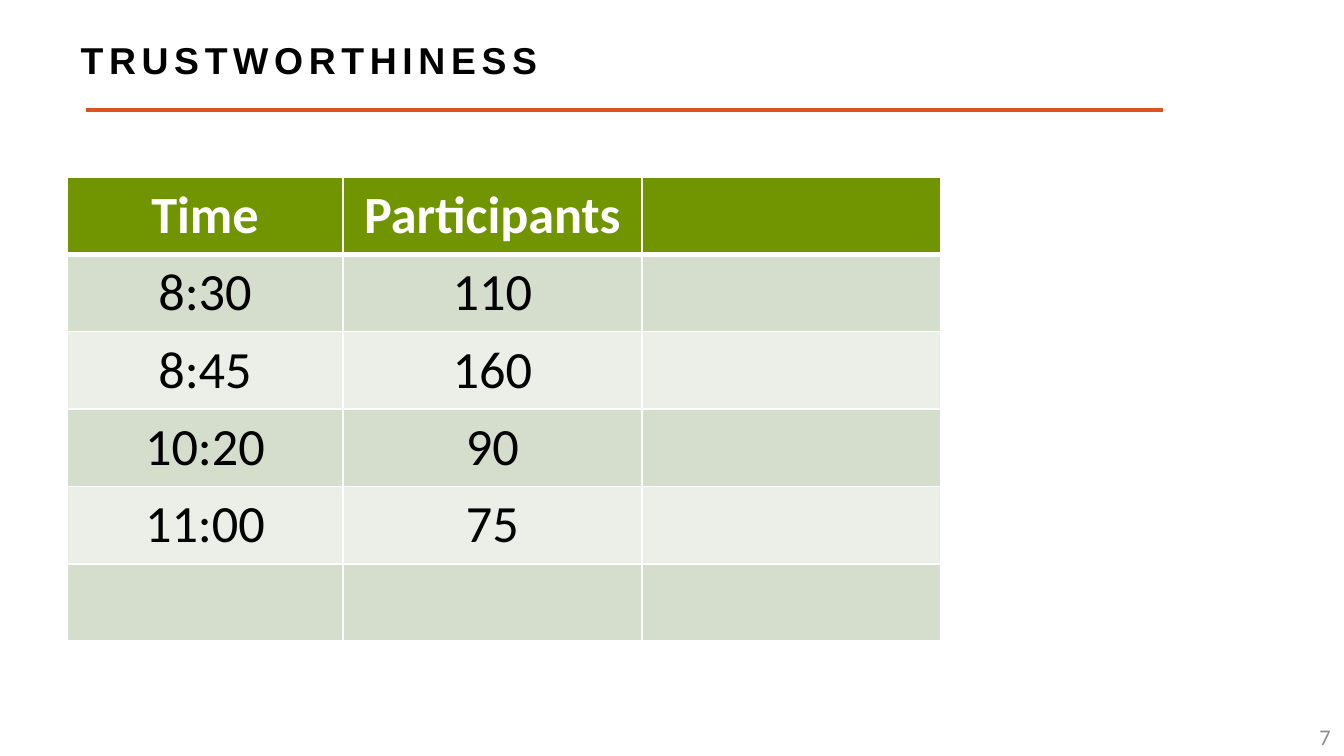
from lxml.etree import SubElement
from pptx import Presentation
from pptx.dml.color import RGBColor
from pptx.enum.shapes import MSO_CONNECTOR as Connector
from pptx.enum.text import MSO_ANCHOR as Anchor, MSO_AUTO_SIZE as AutoSize, PP_ALIGN as Align
from pptx.oxml.ns import qn
from pptx.util import Cm, Pt

BLACK = RGBColor(0x00, 0x00, 0x00)
WHITE = RGBColor(0xFF, 0xFF, 0xFF)
GREEN = RGBColor(0x71, 0x95, 0x00)
BAND_DARK = RGBColor(0xD5, 0xDD, 0xCC)
BAND_LIGHT = RGBColor(0xEB, 0xEF, 0xE7)
ORANGE = RGBColor(0xDC, 0x52, 0x20)
GRAY = RGBColor(0x8C, 0x8C, 0x8C)

SCHEDULE = [
    ("Time", "Participants", ""),
    ("8:30", "110", ""),
    ("8:45", "160", ""),
    ("10:20", "90", ""),
    ("11:00", "75", ""),
    ("", "", ""),
]


class SlideBuilder:
    title_font = "Arial"
    body_font = "Calibri"

    def __init__(self, deck):
        self.page = deck.slides.add_slide(deck.slide_layouts[5])

    def add_text(self, frame, text, size, color, font, align, bold=False):
        para = frame.paragraphs[0]
        para.alignment = align
        span = para.add_run()
        span.text = text
        span.font.name = font
        span.font.size = Pt(size)
        span.font.bold = bold
        span.font.color.rgb = color
        return span

    def title(self, text, left, top, width, height):
        box = self.page.shapes.title
        box.left, box.top, box.width, box.height = Cm(left), Cm(top), Cm(width), Cm(height)
        frame = box.text_frame
        frame.auto_size = AutoSize.NONE
        frame.vertical_anchor = Anchor.MIDDLE
        span = self.add_text(frame, text, 20, BLACK, self.title_font, Align.LEFT, True)
        span._r.get_or_add_rPr().set("spc", "300")

    def rule(self, left, right, y):
        line = self.page.shapes.add_connector(
            Connector.STRAIGHT, Cm(left), Cm(y), Cm(right), Cm(y))
        line.line.color.rgb = ORANGE
        line.line.width = Pt(2)
        SubElement(line._element.spPr, qn("a:effectLst"))

    def borders(self, cell, widths):
        properties = cell._tc.get_or_add_tcPr()
        for side, width in widths.items():
            edge = SubElement(properties, qn(f"a:ln{side}"), w=str(Pt(width)))
            fill = SubElement(edge, qn("a:solidFill"))
            SubElement(fill, qn("a:srgbClr"), val=str(WHITE))

    def table(self, rows, left, top, column_widths, row_height):
        grid = self.page.shapes.add_table(
            len(rows), len(column_widths), Cm(left), Cm(top),
            Cm(sum(column_widths)), Cm(row_height * len(rows))).table
        for column, width in zip(grid.columns, column_widths):
            column.width = Cm(width)
        for r, values in enumerate(rows):
            header = r == 0
            band = GREEN if header else BAND_DARK if r % 2 else BAND_LIGHT
            for c, value in enumerate(values):
                cell = grid.cell(r, c)
                self.borders(cell, {"L": 1, "R": 1, "T": 3 if r == 1 else 1,
                                    "B": 3 if header else 1})
                cell.fill.solid()
                cell.fill.fore_color.rgb = band
                if value:
                    self.add_text(cell.text_frame, value, 28, WHITE if header else BLACK,
                                  self.body_font, Align.CENTER, header)

    def page_number(self, text, left, top, width, height):
        box = self.page.shapes.add_textbox(Cm(left), Cm(top), Cm(width), Cm(height))
        frame = box.text_frame
        frame.word_wrap = True
        frame.vertical_anchor = Anchor.MIDDLE
        self.add_text(frame, text, 12, GRAY, self.body_font, Align.RIGHT)


def main():
    deck = Presentation()
    deck.slide_width, deck.slide_height = Cm(25.4), Cm(14.28)
    slide = SlideBuilder(deck)

    # Heading
    slide.title("TRUSTWORTHINESS", 1.27, 0, 22.86, 2.24)

    # Attendance table
    slide.table(SCHEDULE, 1.27, 3.34, [5.21, 5.65, 5.65], 1.46)

    # Line under the heading
    slide.rule(1.62, 21.97, 2.08)

    # Footer
    slide.page_number("7", 19.48, 13.54, 5.92, 0.76)

    deck.save("out.pptx")


if __name__ == "__main__":
    main()
